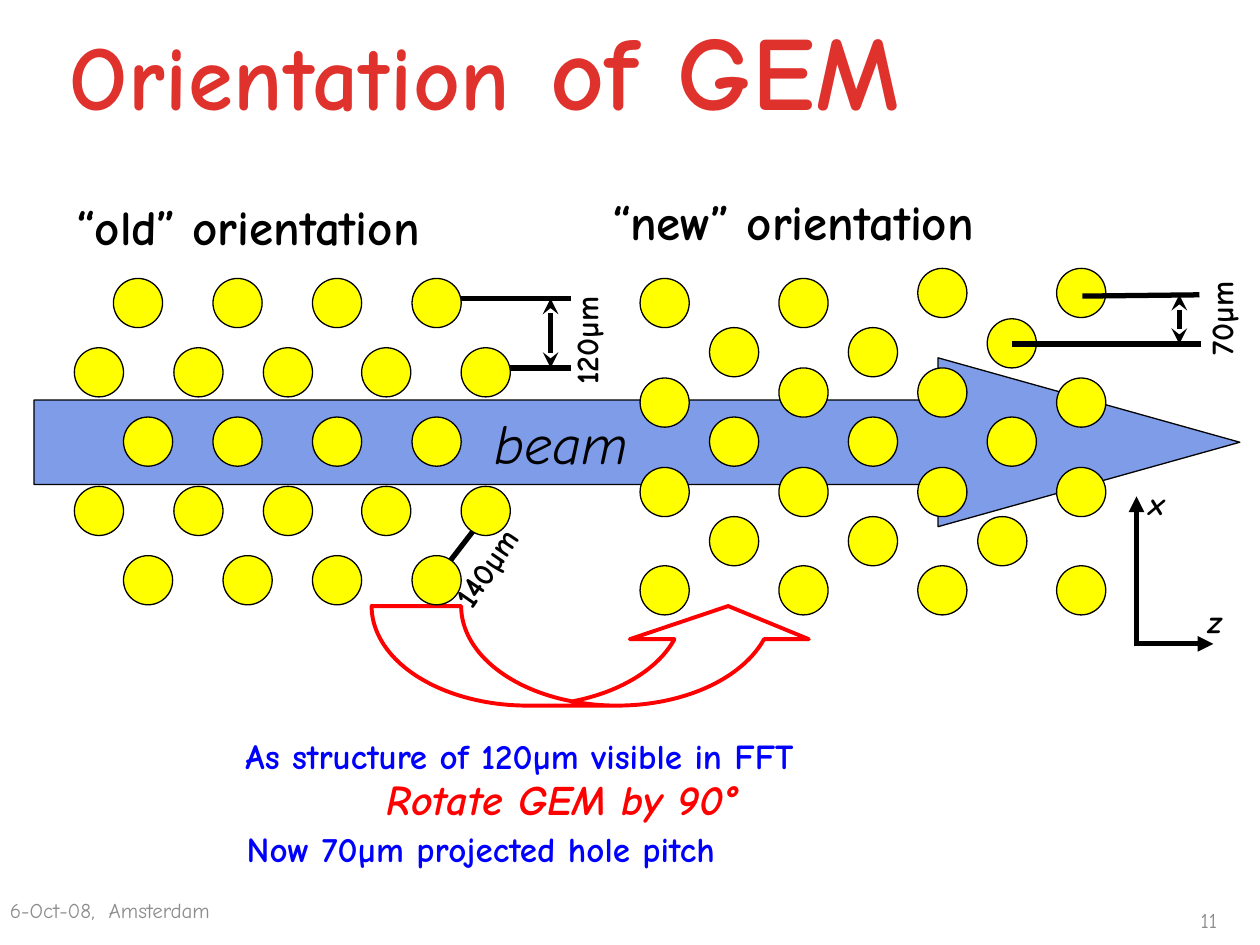
from lxml import etree
from pptx import Presentation, util as u
from pptx.dml.color import RGBColor
from pptx.enum import shapes, text
from pptx.oxml.ns import qn

# Content: lengths in inches, text sizes in points
FONT = "Comic Neue"
COLORS = {"title": "E0322D", "beam": "7E9CE8", "hole": "FFFF00", "black": "000000",
          "red": "FF0000", "blue": "0000FF", "gray": "8C8C8C"}
HOLE = 0.39

# Old orientation: rows at an equal pitch, each with the left edges of its holes
OLD_TOP, OLD_PITCH = 2.21, 0.55
WIDE_ROW = [0.59, 1.38, 2.09, 2.87, 3.66]
OLD_ROWS = [
    [0.9, 1.69, 2.48, 3.27],
    WIDE_ROW,
    [0.98, 1.69, 2.48, 3.27],
    WIDE_ROW,
    [0.98, 1.77, 2.48, 3.27],
]

# New orientation: columns at an equal pitch, each with the top edges of its holes
NEW_LEFT, NEW_PITCH = 5.08, 0.551
SHORT_COLUMN = [2.6, 3.31, 4.1]
NEW_COLUMNS = [
    [2.21, 3, 3.71, 4.49],
    SHORT_COLUMN,
    [2.21, 2.92, 3.71, 4.49],
    SHORT_COLUMN,
    [2.13, 2.92, 3.71, 4.49],
    [2.53, 3.31],
    [2.13, 3, 3.71, 4.49],
]
STRAY_HOLE = (7.76, 4.1)

# Text, box, size, colour, style (b bold, i italic), rotation
HEADINGS = [
    ("“old” orientation", (0.51, 1.51, 4.17, 0.57), 28, "black", "b", 0),
    ("“new” orientation", (4.76, 1.47, 4.17, 0.57), 28, "black", "b", 0),
]
NOTES = [
    ("As structure of 120µm visible in FFT", (1.85, 5.78, 8.66, 0.43), 20, "blue", "b", 0),
    ("Rotate GEM by 90°", (2.97, 6.09, 3.84, 0.51), 24, "red", "bi", 0),
    ("Now 70µm projected hole pitch", (1.86, 6.52, 6.27, 0.44), 20, "blue", "b", 0),
]
PITCH_LABELS = [
    ("120µm", (4.06, 2.36, 1.18, 0.4), 18, "black", "b", 270),
    ("70µm", (9.1, 2.13, 1.18, 0.4), 18, "black", "b", 270),
    ("140µm", (3.35, 4.18, 1.18, 0.4), 18, "black", "b", 304),
]
AXIS_LABELS = [
    ("x", (9.02, 3.79, 0.39, 0.4), 18, "black", "bi", 0),
    ("z", (9.49, 4.73, 0.39, 0.4), 18, "black", "bi", 0),
]

# Start, end, arrowhead at start, arrowhead at end
AXES = [
    ((9.02, 5.13), (9.02, 3.94), None, "triangle"),
    ((9, 5.11), (9.63, 5.11), None, "triangle"),
]
PITCH_LINES = [
    ((3.5, 2.37), (4.53, 2.37), None, None),
    ((3.82, 2.92), (4.53, 2.92), None, None),
    ((4.37, 2.37), (4.37, 2.92), "stealth", "stealth"),
    ((8.59, 2.35), (9.52, 2.34), None, None),
    ((8.03, 2.73), (9.53, 2.73), None, None),
    ((9.36, 2.34), (9.36, 2.73), "stealth", "stealth"),
    ((3.89, 4.04), (3.42, 4.65), "stealth", "stealth"),
]


def inches(values):
    return [u.Inches(value) for value in values]


def color(name):
    return RGBColor.from_string(COLORS[name])


def style_run(run, size, name, style=""):
    run.font.name, run.font.size = FONT, u.Pt(size)
    run.font.bold, run.font.italic = "b" in style, "i" in style
    run.font.color.rgb = color(name)


def add_text(parent, words, box, size, name, style="", rotation=0,
             align=text.PP_ALIGN.LEFT, anchor=text.MSO_ANCHOR.TOP):
    shape = parent.add_textbox(*inches(box))
    shape.rotation = rotation
    frame = shape.text_frame
    frame.text = words
    frame.word_wrap = True
    frame.vertical_anchor = anchor
    paragraph = frame.paragraphs[0]
    paragraph.alignment = align
    style_run(paragraph.runs[0], size, name, style)
    return paragraph


def add_preset(parent, kind, box, fill, line, width, adjustments=()):
    shape = parent.add_shape(kind, *inches(box))
    shape.shadow.inherit = False
    if fill:
        shape.fill.solid()
        shape.fill.fore_color.rgb = color(fill)
    else:
        shape.fill.background()
    shape.line.color.rgb = color(line)
    shape.line.width = u.Pt(width)
    for index, value in enumerate(adjustments):
        shape.adjustments[index] = value
    return shape


def add_line(parent, start, end, head, tail):
    line = parent.add_connector(shapes.MSO_CONNECTOR.STRAIGHT, *inches(start + end))
    line.line.color.rgb = color("black")
    line.line.width = u.Pt(3)
    properties = line.line._get_or_add_ln()
    for tag, arrow in (("a:headEnd", head), ("a:tailEnd", tail)):
        if arrow:
            etree.SubElement(properties, qn(tag), type=arrow)
    etree.SubElement(line._element.spPr, qn("a:effectLst"))


def add_holes(slide, places):
    group = slide.shapes.add_group_shape()
    for left, top in places:
        add_preset(group.shapes, shapes.MSO_SHAPE.OVAL, (left, top, HOLE, HOLE),
                   "hole", "black", 0.75)


def main():
    presentation = Presentation()
    presentation.slide_width, presentation.slide_height = inches((10, 7.5))
    slide = presentation.slides.add_slide(presentation.slide_layouts[6])
    middle = text.MSO_ANCHOR.MIDDLE

    # Title and slide number
    title = add_text(slide.shapes, "Orientation", (-0.65, -0.08, 9, 1.25), 52, "title", "b",
                     align=text.PP_ALIGN.CENTER, anchor=middle)
    ending = title.add_run()
    ending.text = " of GEM"
    style_run(ending, 60, "title", "b")
    for run in title.runs:
        run.font._element.set("spc", "50")
    add_text(slide.shapes, "11", (7.43, 7.1, 2.33, 0.4), 12, "gray",
             align=text.PP_ALIGN.RIGHT, anchor=middle)

    # Beam arrow
    beam = add_preset(slide.shapes, shapes.MSO_SHAPE.RIGHT_ARROW, (0.27, 2.84, 9.57, 1.34),
                      "beam", "black", 0.75, (0.5, 1.787))
    beam.text_frame.text = "beam"
    beam.text_frame.word_wrap = False
    beam.text_frame.vertical_anchor = middle
    paragraph = beam.text_frame.paragraphs[0]
    paragraph.alignment = text.PP_ALIGN.CENTER
    style_run(paragraph.runs[0], 32, "black", "i")

    # New hole pattern
    add_holes(slide, [(NEW_LEFT + column * NEW_PITCH, top)
                      for column, tops in enumerate(NEW_COLUMNS) for top in tops]
              + [STRAY_HOLE])

    # Coordinate axes
    axes = slide.shapes.add_group_shape()
    for axis in AXES:
        add_line(axes.shapes, *axis)
    for label in AXIS_LABELS:
        add_text(axes.shapes, *label)

    # Rotation arrow, pitch marks and wording
    add_preset(slide.shapes, shapes.MSO_SHAPE.CURVED_UP_ARROW, (2.95, 4.81, 3.54, 0.79),
               None, "red", 2.25, (0.899, 1.798, 0.333))
    for line in PITCH_LINES:
        add_line(slide.shapes, *line)
    for label in HEADINGS + NOTES + PITCH_LABELS:
        add_text(slide.shapes, *label)

    # Old hole pattern, in front of the diagonal pitch line
    add_holes(slide, [(left, OLD_TOP + row * OLD_PITCH)
                      for row, lefts in enumerate(OLD_ROWS) for left in lefts])

    # Date and place
    add_text(slide.shapes, "6-Oct-08,  Amsterdam", (-0.02, 7.1, 3.58, 0.25), 12, "gray",
             anchor=middle)
    presentation.save("out.pptx")


if __name__ == "__main__":
    main()
